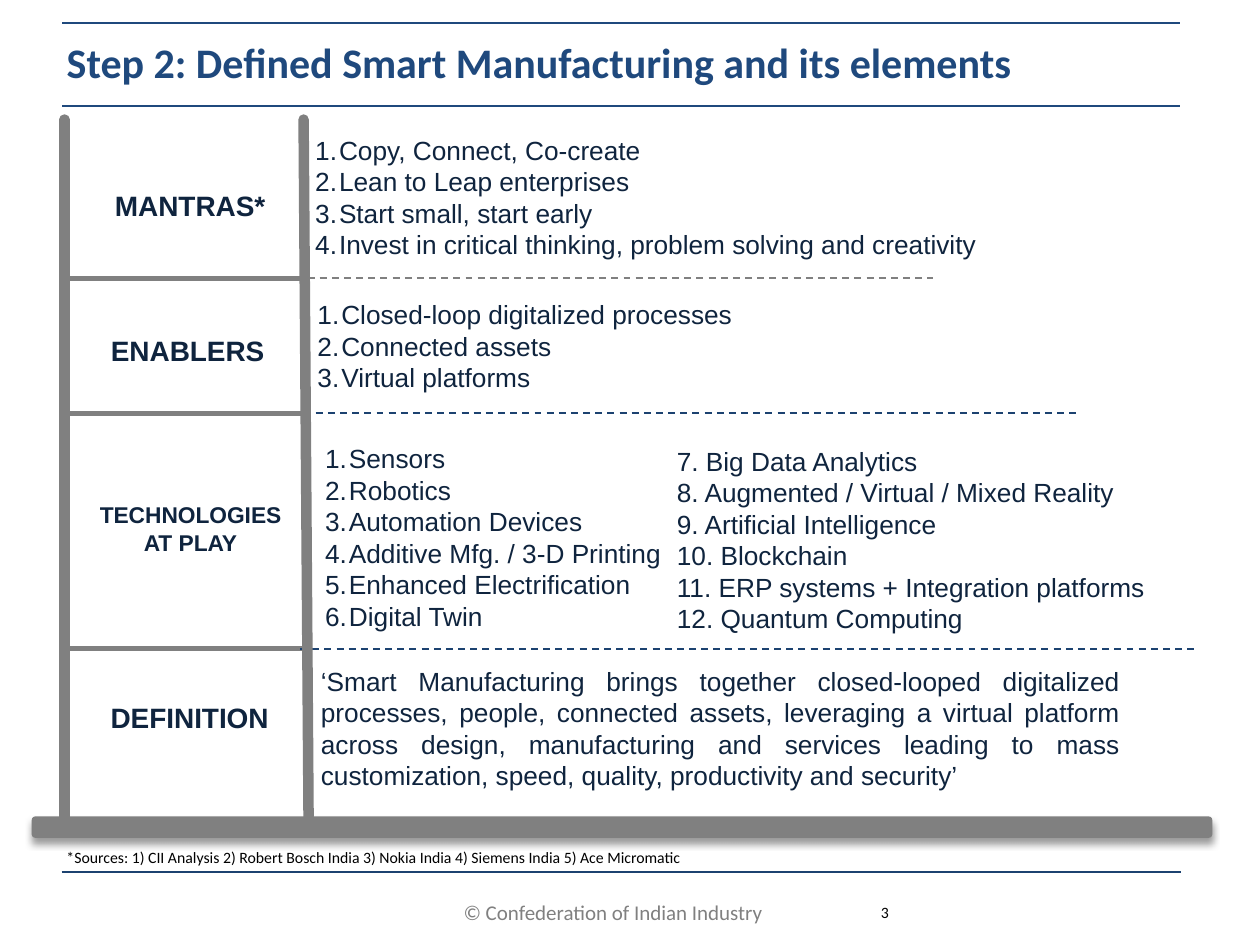
from dataclasses import dataclass
from typing import Optional

from lxml.etree import SubElement
from pptx import Presentation
from pptx.dml.color import RGBColor
from pptx.enum.dml import MSO_LINE
from pptx.enum.shapes import MSO_CONNECTOR, MSO_SHAPE
from pptx.enum.text import MSO_ANCHOR, MSO_AUTO_SIZE, PP_ALIGN
from pptx.oxml.ns import qn
from pptx.util import Cm, Pt


@dataclass(frozen=True)
class Theme:
    title: RGBColor = RGBColor(0x1F, 0x49, 0x7D)
    rule: RGBColor = RGBColor(0x1C, 0x42, 0x70)
    frame: RGBColor = RGBColor(0x80, 0x80, 0x80)
    ink: RGBColor = RGBColor(0x0F, 0x24, 0x3E)
    black: RGBColor = RGBColor(0, 0, 0)
    heading_font: str = "Calibri"
    body_font: str = "Arial"
    title_size: int = 24
    label_size: int = 16
    small_label_size: int = 13
    body_size: int = 15
    footer_size: int = 12
    note_size: int = 9


THEME = Theme()


@dataclass(frozen=True)
class Box:
    left: float
    top: float
    width: float
    height: float


@dataclass(frozen=True)
class TextStyle:
    size: int
    color: RGBColor
    font: str
    bold: bool = False
    align: PP_ALIGN = PP_ALIGN.LEFT
    anchor: MSO_ANCHOR = MSO_ANCHOR.TOP


@dataclass(frozen=True)
class Label:
    text: str
    box: Box
    style: TextStyle


@dataclass(frozen=True)
class ItemList:
    placeholder: int
    box: Box
    items: tuple
    numbered: bool = True
    align: PP_ALIGN = PP_ALIGN.JUSTIFY
    inset: Optional[float] = None


@dataclass(frozen=True)
class Rule:
    start: tuple
    end: tuple
    color: RGBColor
    width: float = 1
    dashed: bool = False
    rounded: bool = False


TITLE = TextStyle(THEME.title_size, THEME.title, THEME.heading_font, True)
ROW_LABEL = TextStyle(THEME.label_size, THEME.ink, THEME.body_font, True, PP_ALIGN.CENTER)
SMALL_LABEL = TextStyle(THEME.small_label_size, THEME.ink, THEME.body_font, True, PP_ALIGN.CENTER)
DEFINITION = TextStyle(THEME.body_size, THEME.ink, THEME.body_font, align=PP_ALIGN.JUSTIFY)
FOOTER = TextStyle(THEME.footer_size, THEME.frame, THEME.heading_font, align=PP_ALIGN.CENTER)
SOURCES = TextStyle(THEME.note_size, THEME.black, THEME.heading_font)
PAGE = TextStyle(THEME.note_size, THEME.black, THEME.heading_font,
                 align=PP_ALIGN.CENTER, anchor=MSO_ANCHOR.MIDDLE)

LABELS = (
    Label("MANTRAS*", Box(1.65, 3.68, 4.37, 0.94), ROW_LABEL),
    Label("ENABLERS", Box(1.98, 6.6, 3.61, 0.94), ROW_LABEL),
    Label("TECHNOLOGIES AT PLAY", Box(1.73, 9.98, 4.22, 1.37), SMALL_LABEL),
    Label("DEFINITION", Box(1.96, 14, 3.73, 0.94), ROW_LABEL),
    Label("‘Smart Manufacturing brings together closed-looped digitalized processes, "
          "people, connected assets, leveraging a virtual platform across design, "
          "manufacturing and services leading to mass customization, speed, quality, "
          "productivity and security’", Box(6.22, 13.28, 16.61, 2.82), DEFINITION),
    Label("*Sources: 1) CII Analysis 2) Robert Bosch India 3) Nokia India "
          "4) Siemens India 5) Ace Micromatic", Box(1.09, 16.97, 16.31, 0.64), SOURCES),
    Label("© Confederation of Indian Industry", Box(9.02, 18, 6.68, 0.76), FOOTER),
    Label("3", Box(17.04, 17.88, 1.6, 1.02), PAGE),
)

LISTS = (
    ItemList(1, Box(6.1, 2.57, 16.74, 2.82), (
        "Copy, Connect, Co-create", "Lean to Leap enterprises", "Start small, start early",
        "Invest in critical thinking, problem solving and creativity")),
    ItemList(2, Box(6.4, 6.02, 13.28, 1.93), (
        "Closed-loop digitalized processes", "Connected assets", "Virtual platforms"), inset=0),
    ItemList(3, Box(6.3, 8.79, 7.49, 4.11), (
        "Sensors", "Robotics", "Automation Devices", "Additive Mfg. / 3-D Printing",
        "Enhanced Electrification", "Digital Twin"), align=PP_ALIGN.LEFT),
    ItemList(4, Box(13.39, 8.84, 11.02, 4.11), (
        "7. Big Data Analytics", "8. Augmented / Virtual / Mixed Reality",
        "9. Artificial Intelligence", "10. Blockchain",
        "11. ERP systems + Integration platforms", "12. Quantum Computing"), numbered=False),
)

POST_LEFT, POST_TOP, BASE_TOP = 1.3, 2.41, 16.46
DIVIDERS = (
    (5.61, 6.1, 6.2, 18.8, THEME.frame),
    (8.33, 6.25, 6.12, 21.77, THEME.rule),
    (13.08, 6.17, 6.05, 24.1, THEME.rule),
)
HEADER = Box(1.24, 0.46, 22.56, 1.68)
BASE = Box(0.64, BASE_TOP, 23.8, 0.43)


def place(shape, box: Box) -> None:
    shape.left, shape.top = Cm(box.left), Cm(box.top)
    shape.width, shape.height = Cm(box.width), Cm(box.height)


def style_paragraph(paragraph, style: TextStyle) -> None:
    paragraph.alignment = style.align
    paragraph.space_before = Pt(0)
    font = paragraph.font
    font.size, font.bold, font.name = Pt(style.size), style.bold, style.font
    font.color.rgb = style.color


def fill_frame(frame, text: str, style: TextStyle) -> None:
    frame.word_wrap = True
    frame.auto_size = MSO_AUTO_SIZE.NONE
    frame.vertical_anchor = style.anchor
    frame.text = text
    for paragraph in frame.paragraphs:
        style_paragraph(paragraph, style)


def draw_label(slide, label: Label) -> None:
    box = label.box
    text_box = slide.shapes.add_textbox(Cm(box.left), Cm(box.top), Cm(box.width), Cm(box.height))
    fill_frame(text_box.text_frame, label.text, label.style)


def draw_list(slide, item_list: ItemList) -> None:
    body = slide.placeholders[item_list.placeholder]
    place(body, item_list.box)
    frame = body.text_frame
    if item_list.inset is not None:
        frame.margin_left = frame.margin_right = Cm(item_list.inset)
        frame.margin_top = frame.margin_bottom = Cm(item_list.inset)
    frame.text = "\n".join(item_list.items)
    for paragraph in frame.paragraphs:
        properties = paragraph._p.get_or_add_pPr()
        indent = Cm(0.48) if item_list.numbered else 0
        properties.set("marL", str(indent))
        properties.set("indent", str(-indent))
        if item_list.numbered:
            SubElement(properties, qn("a:buFont"), typeface="+mj-lt")
            SubElement(properties, qn("a:buAutoNum"), type="arabicPeriod")
        else:
            SubElement(properties, qn("a:buNone"))
        style_paragraph(paragraph, TextStyle(THEME.body_size, THEME.ink, THEME.body_font,
                                             align=item_list.align))
    frame.word_wrap = True
    frame.auto_size = MSO_AUTO_SIZE.NONE
    frame.vertical_anchor = MSO_ANCHOR.TOP


def draw_rule(slide, rule: Rule) -> None:
    connector = slide.shapes.add_connector(
        MSO_CONNECTOR.STRAIGHT, *(Cm(value) for value in rule.start + rule.end))
    connector.line.color.rgb = rule.color
    connector.line.width = Pt(rule.width)
    if rule.dashed:
        connector.line.dash_style = MSO_LINE.DASH
    if rule.rounded:
        connector.line._get_or_add_ln().set("cap", "rnd")
    SubElement(connector._element.spPr, qn("a:effectLst"))


def draw_header(slide, box: Box) -> None:
    table = slide.shapes.add_table(
        1, 1, Cm(box.left), Cm(box.top), Cm(box.width), Cm(box.height)).table
    table.first_row = table.horz_banding = False
    cell = table.cell(0, 0)
    properties = cell._tc.get_or_add_tcPr()
    for side in ("a:lnT", "a:lnB"):
        border = SubElement(properties, qn(side), w=str(Pt(1)))
        SubElement(SubElement(border, qn("a:solidFill")), qn("a:srgbClr"), val=str(THEME.title))
    cell.fill.background()


def draw_base(slide, box: Box) -> None:
    base = slide.shapes.add_shape(MSO_SHAPE.ROUNDED_RECTANGLE, Cm(box.left), Cm(box.top),
                                  Cm(box.width), Cm(box.height))
    base.fill.solid()
    base.fill.fore_color.rgb = THEME.frame
    base.line.fill.background()
    base.shadow.inherit = False
    effects = base._element.spPr.find(qn("a:effectLst"))
    shadow = SubElement(effects, qn("a:outerShdw"), blurRad=str(Pt(4)), dist=str(Pt(3)),
                        dir="5400000", rotWithShape="0")
    color = SubElement(shadow, qn("a:srgbClr"), val=str(THEME.black))
    SubElement(color, qn("a:alpha"), val="40000")


def main() -> None:
    presentation = Presentation()
    presentation.slide_width, presentation.slide_height = Cm(25.4), Cm(19.05)
    slide = presentation.slides.add_slide(presentation.slide_layouts[4])
    draw_header(slide, HEADER)
    place(slide.shapes.title, Box(1.09, 0.61, 23.11, 1.27))
    fill_frame(slide.shapes.title.text_frame,
               "Step 2: Defined Smart Manufacturing and its elements", TITLE)
    for item_list in LISTS:
        draw_list(slide, item_list)
    for y, rung_end, dash_start, dash_end, dash_color in DIVIDERS:
        draw_rule(slide, Rule((POST_LEFT, y), (rung_end, y), THEME.frame, 3))
        draw_rule(slide, Rule((dash_start, y), (dash_end, y), dash_color, dashed=True))
    draw_base(slide, BASE)
    for top_x, foot_x in ((POST_LEFT, POST_LEFT), (6.12, 6.22)):
        draw_rule(slide, Rule((top_x, POST_TOP), (foot_x, BASE_TOP), THEME.frame, 6, rounded=True))
    draw_rule(slide, Rule((1.24, 17.58), (23.8, 17.58), THEME.rule))
    for label in LABELS:
        draw_label(slide, label)
    presentation.save("out.pptx")


if __name__ == "__main__":
    main()
